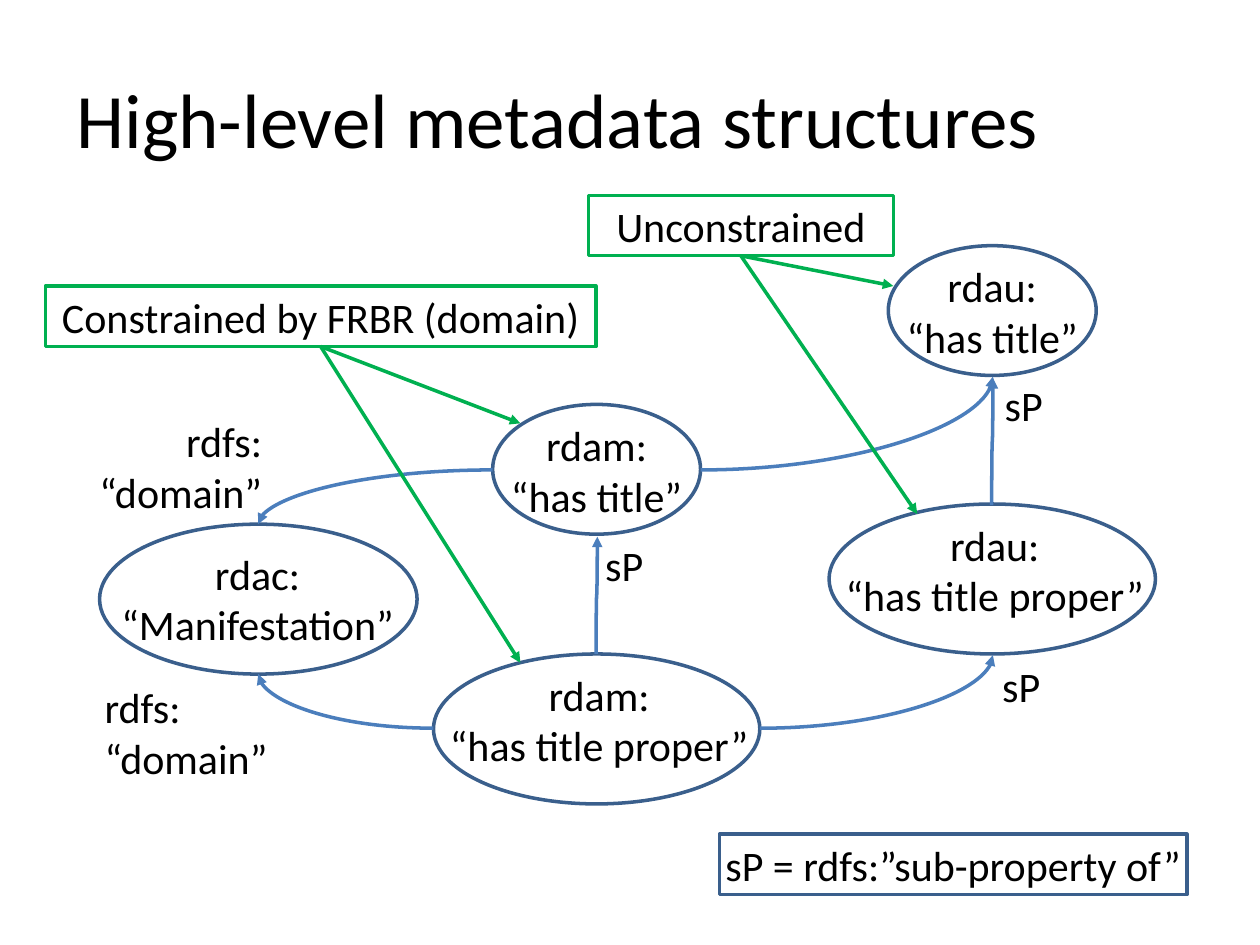
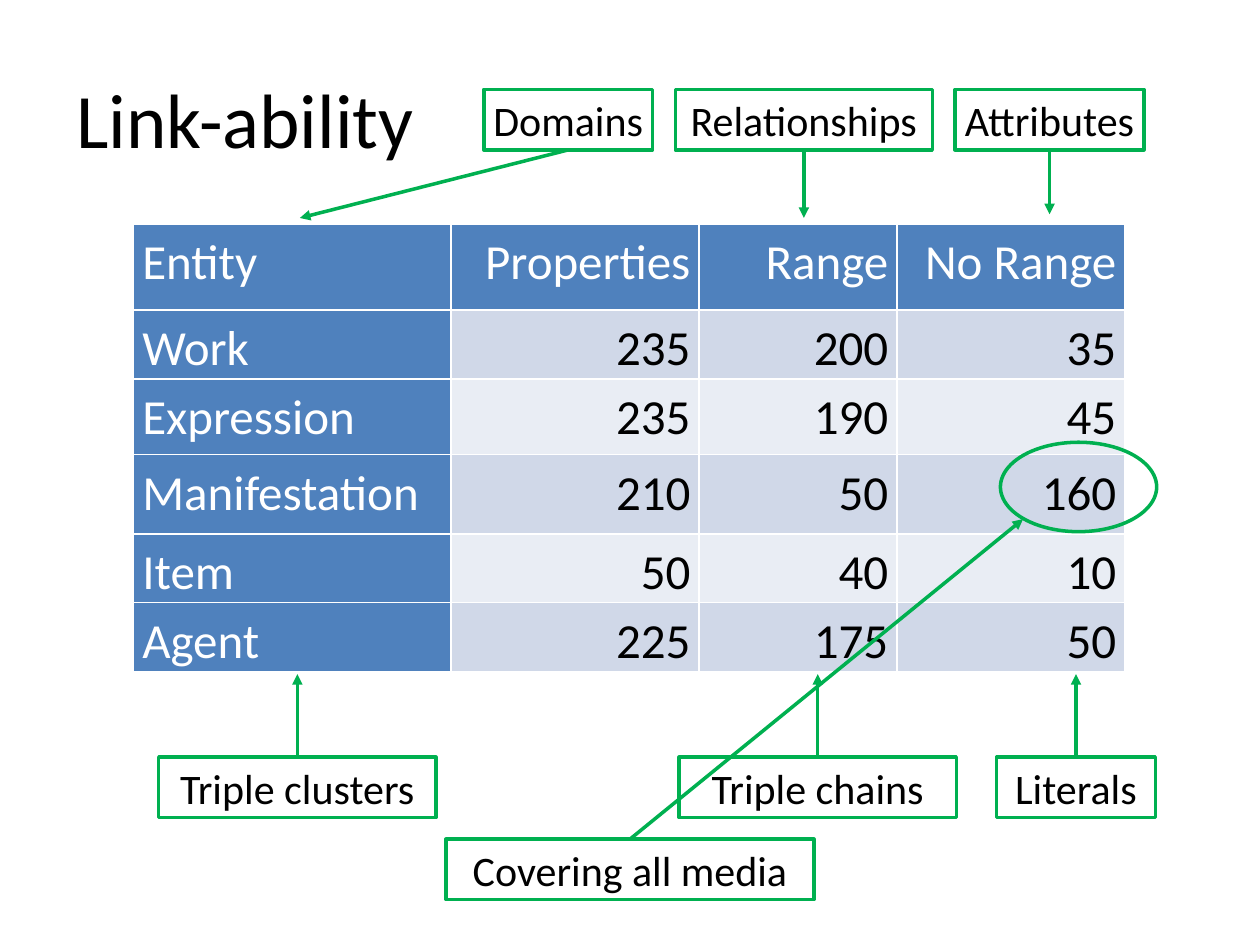
from lxml import etree
from pptx import Presentation
from pptx.dml.color import RGBColor
from pptx.enum.shapes import MSO_CONNECTOR, MSO_SHAPE
from pptx.enum.text import MSO_AUTO_SIZE, PP_ALIGN
from pptx.oxml.ns import qn
from pptx.util import Emu, Pt

BLACK = RGBColor(0x00, 0x00, 0x00)
WHITE = RGBColor(0xFF, 0xFF, 0xFF)
NAVY = RGBColor(0x3A, 0x5F, 0x8C)
BLUE = RGBColor(0x4B, 0x7E, 0xBC)
GREEN = RGBColor(0x00, 0xB0, 0x50)
HEADER = RGBColor(0x4F, 0x81, 0xBD)
BANDS = (RGBColor(0xD0, 0xD8, 0xE8), RGBColor(0xE9, 0xED, 0xF4))

LEFT, CENTER, RIGHT = PP_ALIGN.LEFT, PP_ALIGN.CENTER, PP_ALIGN.RIGHT
RECTANGLE, OVAL = MSO_SHAPE.RECTANGLE, MSO_SHAPE.OVAL
STRAIGHT, CURVE = MSO_CONNECTOR.STRAIGHT, MSO_CONNECTOR.CURVE
GROW = MSO_AUTO_SIZE.SHAPE_TO_FIT_TEXT

FONT = "Calibri"
PX_PER_INCH = 100
LINE_WIDTH = Pt(2)
BOX_HEIGHT = 48
PAIR_HEIGHT = 89
TEXT_INSET = 4

NODE_LAYOUTS = {
    "“Manifestation”": ((252, 119), (7, 15, 237)),
    "“has title”": ((165, 103), (4, 8, 157)),
    "“has title proper”": ((259, 119), (4, 8, 255)),
}

ENTITY_COLUMNS = (252, 197, 157, 181)
ENTITY_HEIGHTS = (68, 52, 60, 63, 52, 52)
ENTITY_ROWS = (
    ("Entity", "Properties", "Range", "No Range"),
    ("Work", "235", "200", "35"),
    ("Expression", "235", "190", "45"),
    ("Manifestation", "210", "50", "160"),
    ("Item", "50", "40", "10"),
    ("Agent", "225", "175", "50"),
)


def px(length):
    return Emu(round(length * 914400 / PX_PER_INCH))


def px_all(*lengths):
    return [px(length) for length in lengths]


def format_para(para, size, color, align):
    para.alignment = align
    for span in para.runs:
        span.font.name = FONT
        span.font.size = Pt(size)
        span.font.bold = False
        span.font.color.rgb = color


def write(frame, text, align=CENTER):
    frame.margin_left = frame.margin_right = px(TEXT_INSET)
    frame.margin_top = frame.margin_bottom = px(TEXT_INSET)
    frame.word_wrap = True
    frame.auto_size = GROW
    frame.text = text
    for para in frame.paragraphs:
        format_para(para, 24, BLACK, align)


def add_title(page, text, width):
    frame = page.shapes.add_textbox(*px_all(51, 52, width, 84)).text_frame
    frame.word_wrap = False
    frame.auto_size = GROW
    frame.text = text
    format_para(frame.paragraphs[0], 44, BLACK, LEFT)


def add_label(parent, text, left, top, width, height, align=CENTER):
    box = parent.shapes.add_textbox(*px_all(left, top, width, height))
    write(box.text_frame, text, align)


def add_outline(parent, kind, left, top, width, height, color):
    shape = parent.shapes.add_shape(kind, *px_all(left, top, width, height))
    shape.shadow.inherit = False
    shape.fill.background()
    shape.line.color.rgb = color
    shape.line.width = LINE_WIDTH
    return shape


def add_node(page, prefix, name, left, top):
    size, (inset_x, inset_y, label_width) = NODE_LAYOUTS[name]
    group = page.shapes.add_group_shape()
    add_outline(group, OVAL, left, top, *size, NAVY)
    add_label(group, f"{prefix}:\n{name}", left + inset_x, top + inset_y,
              label_width, PAIR_HEIGHT)


def add_arrow(page, start, end, color, kind=STRAIGHT):
    arrow = page.shapes.add_connector(kind, *px_all(*start, *end))
    arrow.line.color.rgb = color
    arrow.line.width = LINE_WIDTH
    outline = arrow.line._get_or_add_ln()
    etree.SubElement(outline, qn("a:tailEnd")).set("type", "triangle")
    properties = arrow._element.spPr
    etree.SubElement(properties, qn("a:effectLst"))
    return properties


def add_bend(page, start, end):
    properties = add_arrow(page, start, end, BLUE, CURVE)
    properties.find(qn("a:prstGeom")).set("prst", "curvedConnector2")


def add_climb(page, start, end):
    middle_x, middle_y = (start[0] + end[0]) / 2, (start[1] + end[1]) / 2
    reach, drift = (start[1] - end[1]) / 2, (end[0] - start[0]) / 2
    properties = add_arrow(page, (middle_x + reach, middle_y + drift),
                           (middle_x - reach, middle_y - drift), BLUE, CURVE)
    properties.find(qn("a:xfrm")).set("rot", "5400000")


def add_callout(page, text, left, top, width, color, targets=()):
    box = add_outline(page, RECTANGLE, left, top, width, BOX_HEIGHT, color)
    write(box.text_frame, text)
    for target in targets:
        edge = top + BOX_HEIGHT if target[1] > top else top
        add_arrow(page, (left + width / 2, edge), target, color)


def add_entity_table(page):
    frame = page.shapes.add_table(
        len(ENTITY_ROWS), len(ENTITY_COLUMNS),
        *px_all(106, 178, sum(ENTITY_COLUMNS), sum(ENTITY_HEIGHTS)))
    table = frame.table
    table.first_col = True
    for column, width in zip(table.columns, ENTITY_COLUMNS):
        column.width = px(width)
    for row, height in zip(table.rows, ENTITY_HEIGHTS):
        row.height = px(height)
    for row_index, values in enumerate(ENTITY_ROWS):
        for column_index, value in enumerate(values):
            is_header = row_index == 0 or column_index == 0
            cell = table.cell(row_index, column_index)
            cell.margin_left = cell.margin_right = px(7)
            cell.margin_top = cell.margin_bottom = 0
            cell.fill.solid()
            cell.fill.fore_color.rgb = HEADER if is_header else BANDS[(row_index - 1) % 2]
            cell.text_frame.text = value
            para = cell.text_frame.paragraphs[0]
            para.line_spacing = 1.15
            format_para(para, 28, WHITE if is_header else BLACK,
                        RIGHT if column_index else LEFT)


def build_structures(page):
    add_title(page, "High-level metadata structures", 791)
    for prefix, name, left, top in (
        ("rdac", "“Manifestation”", 79, 416),
        ("rdam", "“has title”", 391, 321),
        ("rdau", "“has title”", 705, 195),
        ("rdam", "“has title proper”", 344, 519),
        ("rdau", "“has title proper”", 658, 400),
    ):
        add_node(page, prefix, name, left, top)
    for start, end in (
        ((344, 578), (205, 535)),
        ((391, 373), (205, 416)),
        ((556, 373), (788, 299)),
        ((603, 578), (788, 520)),
    ):
        add_bend(page, start, end)
    add_climb(page, (787, 401), (788, 300))
    add_climb(page, (473, 519), (474, 426))
    add_label(page, "rdfs:\n“domain”", 79, 537, 152, PAIR_HEIGHT, LEFT)
    add_label(page, "rdfs:\n“domain”", 60, 326, 152, PAIR_HEIGHT, RIGHT)
    for left, top in ((788, 520), (790, 297), (473, 424)):
        add_label(page, "sP", left, top, 45, BOX_HEIGHT)
    add_callout(page, "sP = rdfs:”sub-property of”", 571, 662, 371, NAVY)
    add_callout(page, "Constrained by FRBR (domain)", 36, 227, 437, GREEN,
                ((413, 526), (413, 336)))
    add_callout(page, "Unconstrained", 467, 155, 242, GREEN,
                ((728, 408), (709, 227)))


def build_linkability(page):
    add_entity_table(page)
    add_title(page, "Link-ability", 293)
    add_outline(page, OVAL, 794, 351, 124, 71, GREEN)
    for text, left, top, width, target in (
        ("Triple clusters", 126, 601, 220, (236, 535)),
        ("Triple chains", 539, 601, 220, (649, 535)),
        ("Literals", 791, 601, 126, (854, 535)),
        ("Relationships", 536, 71, 204, (638, 173)),
        ("Attributes", 758, 71, 150, (833, 170)),
        ("Domains", 384, 71, 134, (238, 173)),
        ("Covering all media", 354, 666, 292, (812, 412)),
    ):
        add_callout(page, text, left, top, width, GREEN, (target,))


def main():
    deck = Presentation()
    deck.slide_width, deck.slide_height = px_all(1000, 750)
    blank = deck.slide_layouts[6]
    for build in (build_structures, build_linkability):
        build(deck.slides.add_slide(blank))
    deck.save("out.pptx")


if __name__ == "__main__":
    main()
